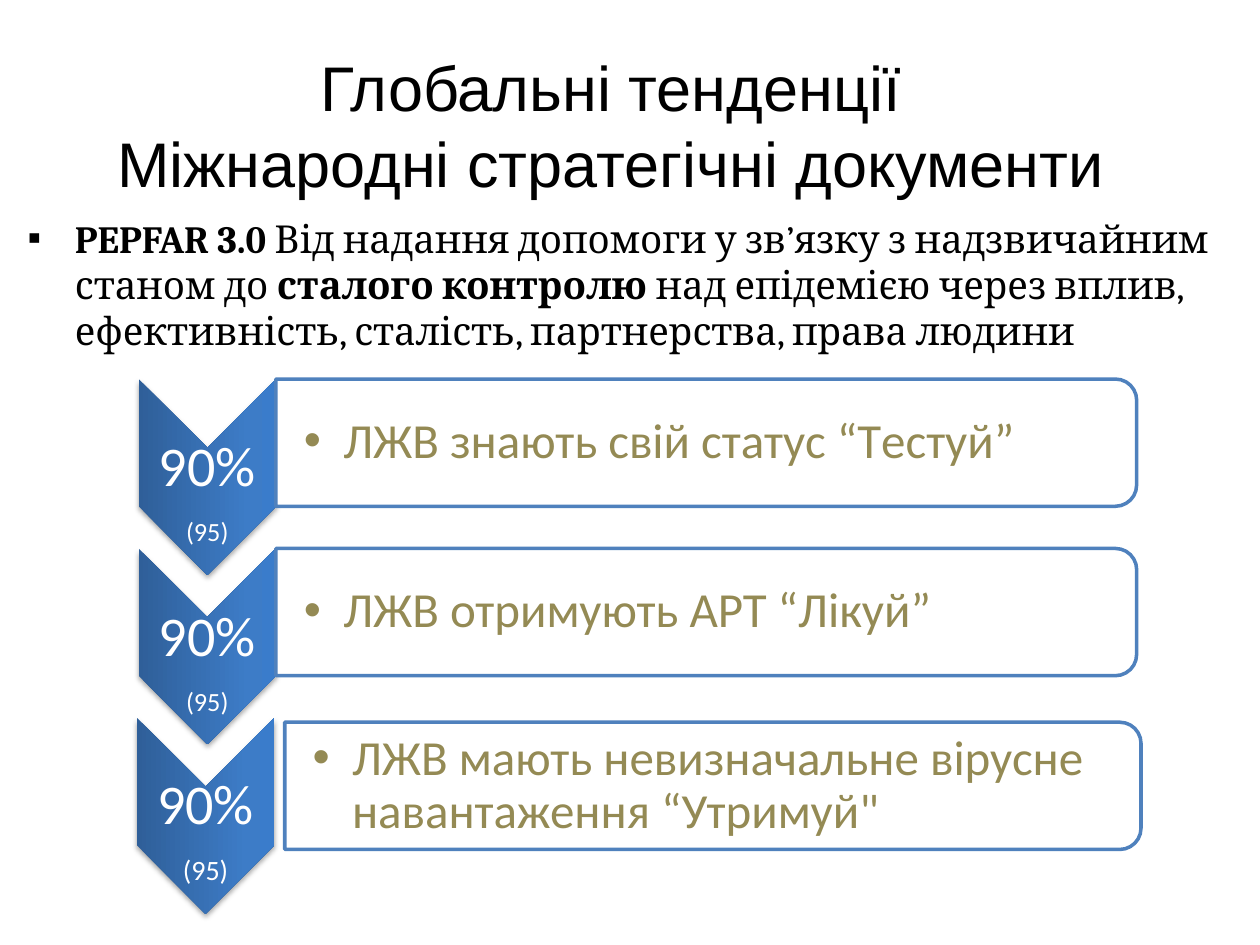
from dataclasses import dataclass
from pptx import Presentation
from pptx.dml.color import RGBColor
from pptx.enum.shapes import MSO_SHAPE as SHAPE
from pptx.enum.text import MSO_ANCHOR as ANCHOR, MSO_AUTO_SIZE as AUTO, PP_ALIGN as ALIGN
from pptx.oxml import parse_xml
from pptx.oxml.ns import nsdecls
from pptx.util import Pt


@dataclass(frozen=True)
class Theme:
    ink: str = "000000"
    panel: str = "FFFFFF"
    border: str = "4F81BD"
    goal: str = "948A54"
    gradient: tuple = ((0, "2F5F99"), (80, "3D7CC7"), (100, "3A7CCB"))
    title_font: str = "Arial"
    body_font: str = "Cambria"
    diagram_font: str = "Calibri"
    title_size: int = 36
    body_size: int = 22
    goal_size: int = 28
    percent_size: int = 32


THEME = Theme()


def style(r, font, size, color, bold=None):
    r.font.name, r.font.size, r.font.bold = font, Pt(size), bold
    r.font.color.rgb = RGBColor.from_string(color)


def place(sp, left, top, width, height):
    sp.left, sp.top, sp.width, sp.height = Pt(left), Pt(top), Pt(width), Pt(height)


def set_bullet(p, char, indent):
    pPr = p._p.get_or_add_pPr()
    pPr.set("marL", str(Pt(indent)))
    pPr.set("indent", str(-Pt(indent)))
    pPr.append(parse_xml(f'<a:buFont {nsdecls("a")} typeface="Arial"/>'))
    pPr.append(parse_xml(f'<a:buChar {nsdecls("a")} char="{char}"/>'))


def add_turned_shape(slide, kind, left, top, width, height):
    """Add a shape turned a quarter clockwise that covers the given box."""
    dx = (width - height) / 2
    sp = slide.shapes.add_shape(kind, Pt(left + dx), Pt(top - dx), Pt(height), Pt(width))
    sp.rotation = 90
    sp.shadow.inherit = False
    return sp


def add_label(slide, left, top, width, height, margin, left_margin):
    tf = slide.shapes.add_textbox(Pt(left), Pt(top), Pt(width), Pt(height)).text_frame
    tf.word_wrap, tf.vertical_anchor = True, ANCHOR.MIDDLE
    tf.margin_top = tf.margin_right = tf.margin_bottom = Pt(margin)
    tf.margin_left = Pt(left_margin)
    return tf


def add_title(slide, text, box):
    sp = slide.shapes.title
    place(sp, *box)
    tf = sp.text_frame
    tf.text = text
    tf.auto_size, tf.vertical_anchor = AUTO.NONE, ANCHOR.MIDDLE
    p = tf.paragraphs[0]
    p.alignment = ALIGN.CENTER
    for r in p.runs:
        style(r, THEME.title_font, THEME.title_size, THEME.ink)


def add_body(slide, parts, box):
    sp = slide.placeholders[1]
    place(sp, *box)
    sp.text_frame.auto_size = AUTO.NONE
    p = sp.text_frame.paragraphs[0]
    p.space_before = Pt(0)
    set_bullet(p, "▪", 27)
    for text, bold in parts:
        r = p.add_run()
        r.text = text
        style(r, THEME.body_font, THEME.body_size, THEME.ink, bold)


def add_chevron(slide, target, target_size, box):
    left, top, width, height = box
    sp = add_turned_shape(slide, SHAPE.CHEVRON, *box)
    sp.line.fill.background()
    # Gradient fill and soft shadow
    stops = "".join(f'<a:gs pos="{pos * 1000}"><a:srgbClr val="{color}"/></a:gs>'
                    for pos, color in THEME.gradient)
    spPr = sp._element.spPr
    spPr.find("{*}prstGeom").addnext(parse_xml(
        f'<a:gradFill {nsdecls("a")} rotWithShape="1"><a:gsLst>{stops}</a:gsLst>'
        '<a:lin ang="16200000" scaled="0"/></a:gradFill>'))
    spPr.find("{*}effectLst").append(parse_xml(
        f'<a:outerShdw {nsdecls("a")} blurRad="{Pt(3.1)}" dist="{Pt(1.8)}" dir="5400000" '
        'rotWithShape="0"><a:srgbClr val="000000"><a:alpha val="35000"/></a:srgbClr>'
        '</a:outerShdw>'))
    # Percentage with the later target below it
    tf = add_label(slide, left, top + 34, width, 62, 1, 1)
    tf.text = f"90%\n{target}"
    for p, size in zip(tf.paragraphs, (THEME.percent_size, target_size)):
        p.alignment, p.line_spacing = ALIGN.CENTER, 0.9
        style(p.runs[0], THEME.diagram_font, size, THEME.panel)
    tf.paragraphs[0].space_after = Pt(11.5)


def add_goal(slide, text, box):
    left, top, width, height = box
    sp = add_turned_shape(slide, SHAPE.ROUND_2_SAME_RECTANGLE, *box)
    sp.fill.solid()
    sp.fill.fore_color.rgb = RGBColor.from_string(THEME.panel)
    sp.line.color.rgb = RGBColor.from_string(THEME.border)
    sp.line.width = Pt(2)
    tf = add_label(slide, left, top + 3.5, width - 3.5, height - 7, 1.4, 16)
    tf.text = text
    p = tf.paragraphs[0]
    p.line_spacing = 0.9
    set_bullet(p, "•", 22.5)
    style(p.runs[0], THEME.diagram_font, THEME.goal_size, THEME.goal)


def add_goal_list(slide, goals, box):
    left, top, width, pitch = box
    chevron_w, chevron_h, panel_h = 78.5, 112, 72.7
    for i, (text, size, chevron_dx, panel_dx, panel_dy) in enumerate(goals):
        y = top + i * pitch
        add_chevron(slide, "(95)", size, (left + chevron_dx, y, chevron_w, chevron_h))
        add_goal(slide, text, (left + chevron_w + panel_dx, y + panel_dy,
                               width - chevron_w - panel_dx / 2, panel_h))


def main():
    prs = Presentation()
    prs.slide_width, prs.slide_height = Pt(720), Pt(540)
    slide = prs.slides.add_slide(prs.slide_layouts[1])
    add_title(slide, "Глобальні тенденції\vМіжнародні стратегічні документи",
              (25, 26, 648, 90))
    add_body(slide, [
        ("PEPFAR 3.0 ", True),
        ("Від надання допомоги у зв’язку з надзвичайним станом до ", False),
        ("сталого контролю ", True),
        ("над епідемією через вплив, ефективність, сталість, партнерства, права людини", False),
    ], (8.6, 119, 703, 401))
    # Text, target size, chevron shift, panel shift across and down
    add_goal_list(slide, [
        ("ЛЖВ знають свій статус “Tестуй”", 15, 0, 0, 0),
        ("ЛЖВ отримують АРТ “Лікуй”", 15, 0, 0, 0),
        ("ЛЖВ мають невизначальне вірусне навантаження “Утримуй\"", 16, -1, 5, 2.5),
    ], (79.2, 216.6, 570.3, 96.8))
    prs.save("out.pptx")


if __name__ == "__main__":
    main()
